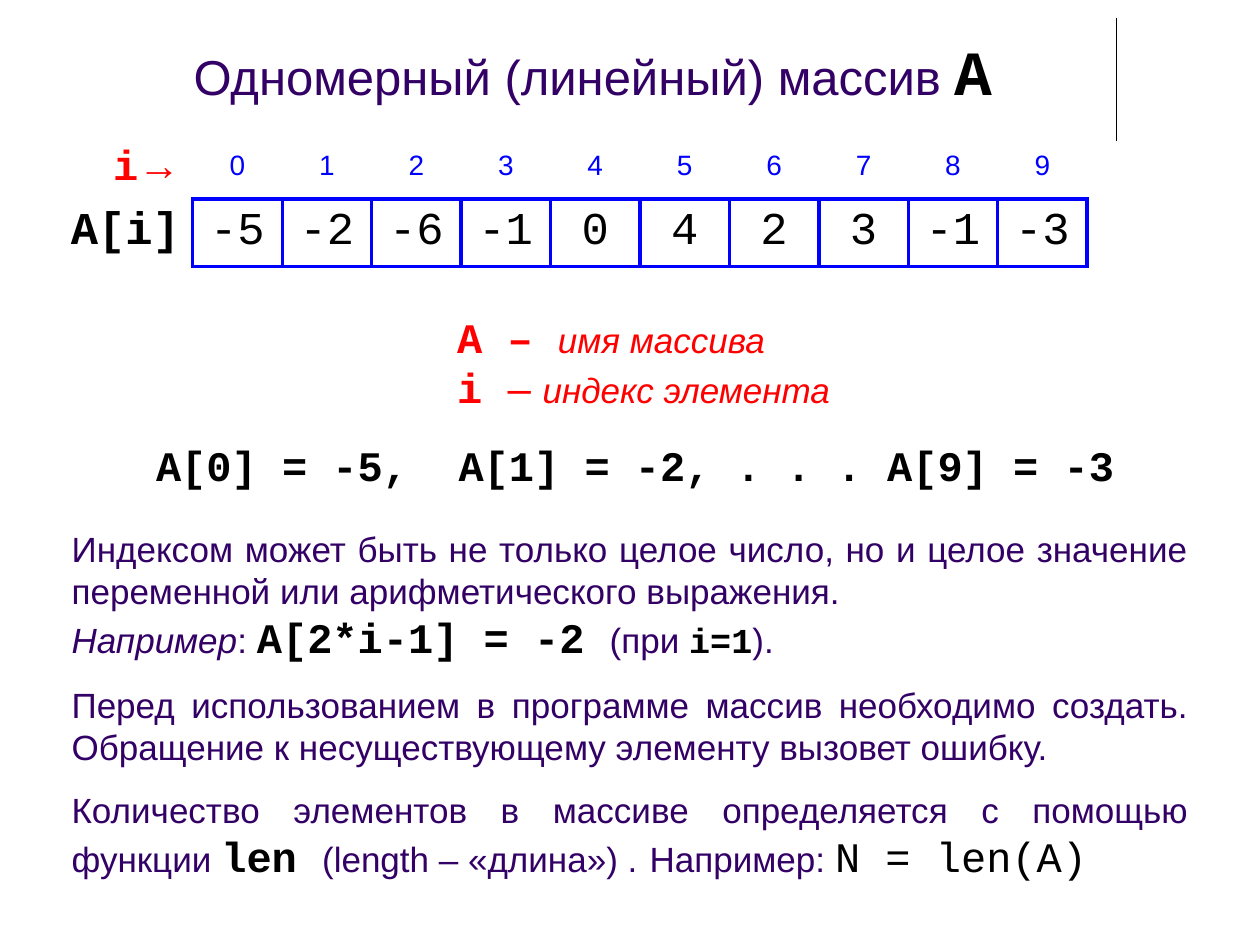
from pptx import Presentation
from pptx import util as u
from pptx.dml.color import RGBColor
from pptx.enum import shapes, text
from pptx.oxml.ns import qn
from lxml import etree

COLORS = {"body": "330066", "code": "000000", "accent": "FF0000",
          "grid": "0000FF", "blank": "FFFFFF"}
ALIGN = text.PP_ALIGN
ANCHOR = text.MSO_ANCHOR
VALUES = [-5, -2, -6, -1, 0, 4, 2, 3, -1, -3]


def run(content, size=20, font="Arial", color="body", bold=False, italic=False):
    """Describe one run of text with its format."""
    return content, size, font, color, bold, italic


def code(content, size=24, color="code", bold=True):
    return run(content, size, "Courier New", color, bold)


def add_runs(p, runs, align=ALIGN.LEFT, before=0):
    p.alignment = align
    p.space_before = u.Pt(before)
    for content, size, font, color, bold, italic in runs:
        r = p.add_run()
        r.text = content
        r.font.size, r.font.name = u.Pt(size), font
        r.font.bold, r.font.italic = bold, italic
        r.font.color.rgb = RGBColor.from_string(COLORS[color])


class Deck:
    """Holds the presentation, its current slide and the shared style."""

    def __init__(self):
        self.prs = Presentation()
        self.prs.slide_width, self.prs.slide_height = u.Inches(10), u.Inches(7.5)
        self.s = self.prs.slides.add_slide(self.prs.slide_layouts[6])

    def add_line(self, x1, y1, x2, y2):
        ln = self.s.shapes.add_connector(
            shapes.MSO_CONNECTOR.STRAIGHT, *map(u.Inches, (x1, y1, x2, y2)))
        ln.line.width = u.Pt(0.75)
        ln.line.color.rgb = RGBColor.from_string(COLORS["code"])
        etree.SubElement(ln._element.spPr, qn("a:effectLst"))

    def add_text(self, box, paragraphs, align=ALIGN.LEFT, wrap=True):
        """Add a text box; each paragraph is (runs, points of space before)."""
        tf = self.s.shapes.add_textbox(*map(u.Inches, box)).text_frame
        tf.word_wrap = wrap
        for i, (runs, before) in enumerate(paragraphs):
            p = tf.add_paragraph() if i else tf.paragraphs[0]
            add_runs(p, runs, align, before)

    def add_table(self, box, rows, cols):
        table = self.s.shapes.add_table(rows, cols, *map(u.Inches, box)).table
        table.first_row = table.horz_banding = False
        return table

    def fill_cell(self, cell, runs, borders, align=ALIGN.CENTER,
                  anchor=ANCHOR.MIDDLE):
        """Fill a cell; borders are colour names for left, right, top, bottom."""
        cell.vertical_anchor = anchor
        add_runs(cell.text_frame.paragraphs[0], runs, align)
        tc_pr = cell._tc.get_or_add_tcPr()
        for side, color in zip(("lnL", "lnR", "lnT", "lnB"), borders):
            ln = etree.SubElement(tc_pr, qn(f"a:{side}"), w=str(u.Pt(2.25)))
            fill = etree.SubElement(ln, qn("a:solidFill"))
            etree.SubElement(fill, qn("a:srgbClr"), val=COLORS[color])
        cell.fill.background()


def add_array(deck):
    table = deck.add_table((0.39, 1.05, 8.24, 1.06), 2, len(VALUES) + 1)
    for row in table.rows:
        row.height = u.Inches(0.53)
    for i, column in enumerate(table.columns):
        column.width = u.Inches(0.71 if i else 1.14)
    deck.fill_cell(
        table.cell(0, 0),
        [code("i", color="accent"), run("→", 24, color="accent", bold=True)],
        ["blank"] * 4, ALIGN.RIGHT, ANCHOR.BOTTOM)
    deck.fill_cell(table.cell(1, 0), [code("A[i]", 26)],
                   ["blank", "grid", "blank", "blank"], ALIGN.RIGHT)
    for i, value in enumerate(VALUES):
        deck.fill_cell(table.cell(0, i + 1), [run(str(i), 16, color="grid")],
                       ["blank"] * 3 + ["grid"])
        deck.fill_cell(table.cell(1, i + 1), [code(str(value), 26, bold=False)],
                       ["grid"] * 4)


def main():
    deck = Deck()
    deck.add_line(8.86, 0.14, 8.86, 1.12)
    deck.add_text((1.22, 0.21, 6.97, 0.7),
                  [([run("Одномерный (линейный) массив ", 28), code("A", 36)], 0)],
                  ALIGN.CENTER)
    add_array(deck)
    deck.add_text((1.14, 3.44, 7.96, 0.5),
                  [([code("A[0] = -5,  A[1] = -2, . . . A[9] = -3")], 0)])
    deck.add_text((3.53, 2.42, 3.16, 0.91), [
        ([code("A – ", color="accent"),
          run("имя массива", color="accent", italic=True)], 0),
        ([code("i ", color="accent"), run("– ", 24, color="accent"),
          run("индекс элемента", color="accent", italic=True)], 0),
    ], wrap=False)
    deck.add_text((0.47, 4.14, 9.06, 2.93), [
        ([run("Индексом может быть не только целое число, но и целое значение "
              "переменной или арифметического выражения.")], 0),
        ([run("Например", italic=True), run(": "), code("A[2*i-1] = -2 "),
          run("(при "), code("i=1", 20), run(").")], 0),
        ([run("Перед использованием в программе массив необходимо создать. "
              "Обращение к несуществующему элементу вызовет ошибку.")], 12),
        ([run("Количество элементов в массиве определяется с помощью функции "),
          code("len "), run("(length – «длина») ."), run(" ", 24, bold=True),
          run("Например: "), code("N = len(A)", bold=False)], 12),
    ], ALIGN.JUSTIFY)
    deck.prs.save("out.pptx")


if __name__ == "__main__":
    main()
